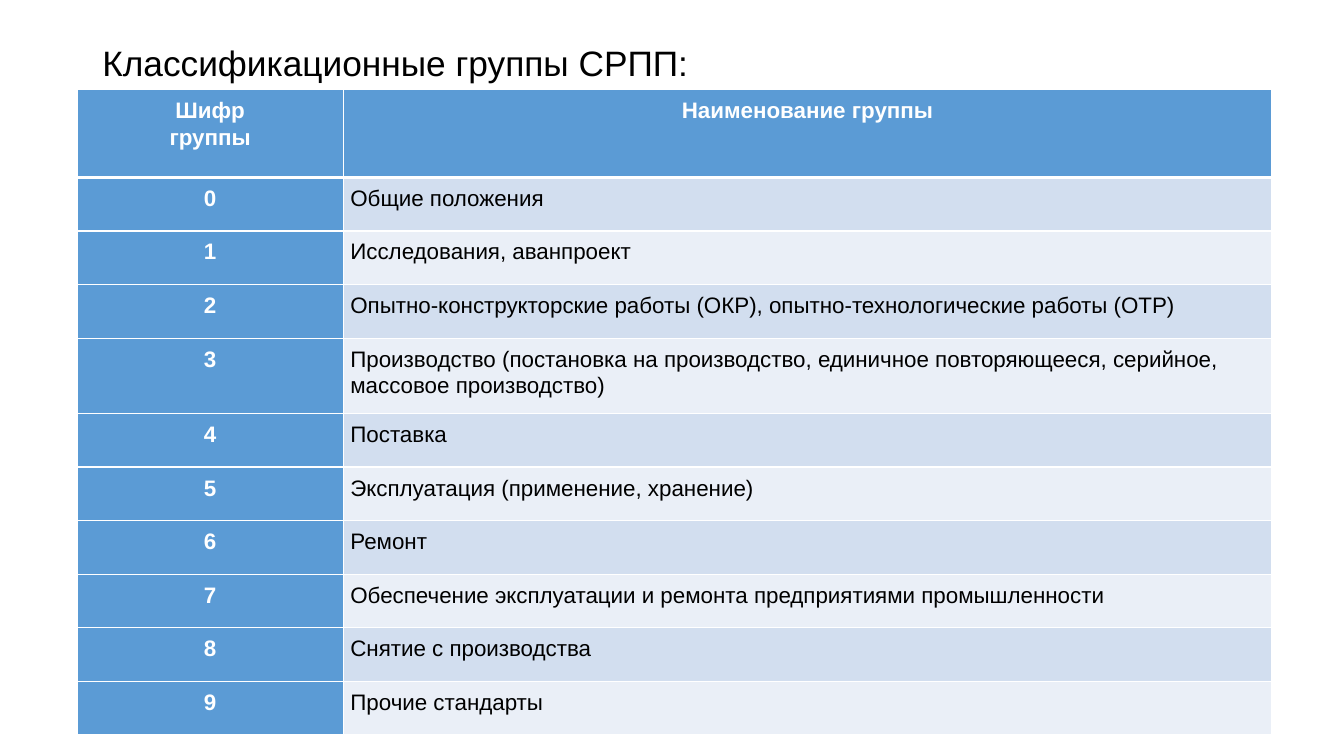
from lxml.etree import SubElement
from pptx import Presentation
from pptx.dml.color import RGBColor as RGB
from pptx.enum.text import MSO_ANCHOR as Anchor, PP_ALIGN as Align
from pptx.oxml.ns import qn
from pptx.util import Cm, Pt

TITLE = "Классификационные группы СРПП:"
HEAD = [["Шифр", "группы"], ["Наименование группы"]]
GROUPS = [
    "Общие положения",
    "Исследования, аванпроект",
    "Опытно-конструкторские работы (ОКР), опытно-технологические работы (ОТР)",
    "Производство (постановка на производство, единичное повторяющееся, серийное, "
    "массовое производство)",
    "Поставка",
    "Эксплуатация (применение, хранение)",
    "Ремонт",
    "Обеспечение эксплуатации и ремонта предприятиями промышленности",
    "Снятие с производства",
    "Прочие стандарты",
]
COLORS = {"head": "5B9BD5", "odd": "D2DEEF", "even": "EAEFF7",
          "white": "FFFFFF", "black": "000000"}
FONT = "Arial"
WIDTHS = [6.71, 23.4]
HEAD_H, ROW_H, TALL_H = 2.21, 1.35, 1.9
TALL_ROW = 4
PAD = Cm(0.18)


def write(frame, lines, size, color, bold=False, align=Align.LEFT, space=1.07):
    for i, line in enumerate(lines):
        para = frame.paragraphs[0] if i == 0 else frame.add_paragraph()
        para.alignment = align
        para.line_spacing = space
        run = para.add_run()
        run.text = line
        font = run.font
        font.name, font.size, font.bold = FONT, Pt(size), bold
        font.color.rgb = RGB.from_string(COLORS[color])


def border(cell, side, width):
    line = SubElement(cell._tc.get_or_add_tcPr(), qn("a:ln" + side), w=str(Pt(width)))
    fill = SubElement(line, qn("a:solidFill"))
    SubElement(fill, qn("a:srgbClr"), val=COLORS["white"])


def style(cell, row, fill):
    cell.margin_left = cell.margin_right = PAD
    cell.margin_top = cell.margin_bottom = PAD
    thick = {0: "B", 1: "T"}.get(row)
    for side in "LRTB":
        border(cell, side, 3 if side == thick else 1)
    cell.fill.solid()
    cell.fill.fore_color.rgb = RGB.from_string(COLORS[fill])


def add_title(slide):
    box = slide.shapes.add_textbox(Cm(2.33), Cm(1.02), Cm(29.21), Cm(1.24))
    frame = box.text_frame
    frame.word_wrap = True
    frame.vertical_anchor = Anchor.MIDDLE
    write(frame, [TITLE], 25.2, "black", space=0.9)


def add_groups(slide):
    rows = [HEAD] + [[[str(i)], [name]] for i, name in enumerate(GROUPS)]
    heights = [HEAD_H] + [ROW_H] * len(GROUPS)
    heights[TALL_ROW] = TALL_H
    table = slide.shapes.add_table(len(rows), len(WIDTHS), Cm(1.94), Cm(2.26),
                                   Cm(sum(WIDTHS)), Cm(sum(heights))).table
    table.first_col = True
    for col, width in zip(table.columns, WIDTHS):
        col.width = Cm(width)
    for r, (lines, height) in enumerate(zip(rows, heights)):
        table.rows[r].height = Cm(height)
        for c, text in enumerate(lines):
            cell = table.cell(r, c)
            if r == 0 or c == 0:
                style(cell, r, "head")
                write(cell.text_frame, text, 16, "white", True, Align.CENTER)
            else:
                style(cell, r, "odd" if r % 2 else "even")
                write(cell.text_frame, text, 16, "black")


def main():
    deck = Presentation()
    deck.slide_width, deck.slide_height = Cm(33.87), Cm(19.05)
    slide = deck.slides.add_slide(deck.slide_layouts[6])
    add_title(slide)
    add_groups(slide)
    deck.save("out.pptx")


if __name__ == "__main__":
    main()
